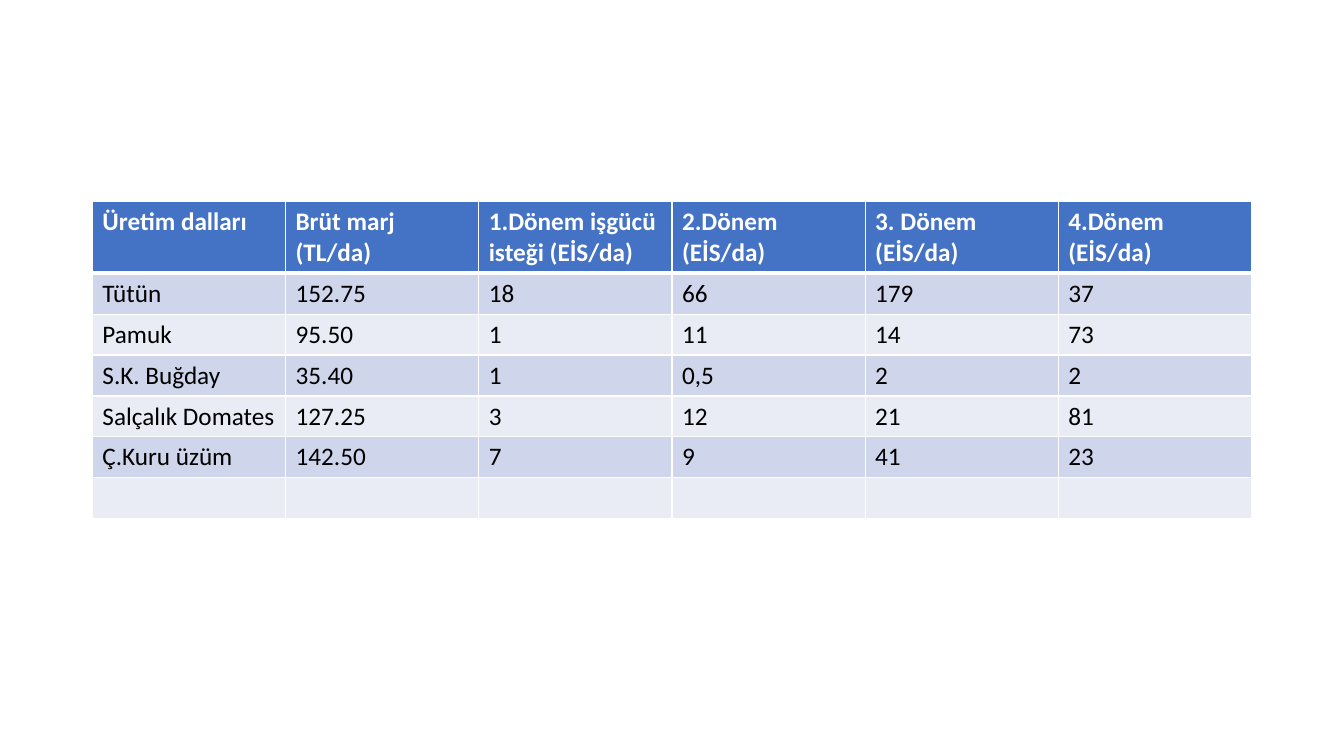
from pptx import Presentation
from pptx import util as u
from pptx.dml.color import RGBColor
from pptx.oxml import ns, xmlchemy

PX = 9525
WHITE = RGBColor(0xFF, 0xFF, 0xFF)
BLACK = RGBColor(0x00, 0x00, 0x00)
HEADER_BLUE = RGBColor(0x44, 0x72, 0xC4)
BANDS = (RGBColor(0xE9, 0xEB, 0xF5), RGBColor(0xCF, 0xD5, 0xEA))

LEFT, TOP, COLUMN_WIDTH, ROW_HEIGHT = 88, 192, 184, 39
BODY_FONT = {"name": "Calibri", "size": u.Pt(18), "bold": False}
HEADER_FONT = {**BODY_FONT, "bold": True}

CROPS = [
    ["Üretim dalları", "Brüt marj (TL/da)", "1.Dönem işgücü isteği (EİS/da)",
     "2.Dönem (EİS/da)", "3. Dönem (EİS/da)", "4.Dönem (EİS/da)"],
    ["Tütün", "152.75", "18", "66", "179", "37"],
    ["Pamuk", "95.50", "1", "11", "14", "73"],
    ["S.K. Buğday", "35.40", "1", "0,5", "2", "2"],
    ["Salçalık Domates", "127.25", "3", "12", "21", "81"],
    ["Ç.Kuru üzüm", "142.50", "7", "9", "41", "23"],
    [""] * 6,
]


def px(length):
    return u.Emu(length * PX)


def add_borders(cell, widths):
    properties = cell._tc.get_or_add_tcPr()
    for side, points in widths.items():
        line = xmlchemy.OxmlElement(f"a:ln{side}")
        line.set("w", str(u.Pt(points)))
        fill = xmlchemy.OxmlElement("a:solidFill")
        color = xmlchemy.OxmlElement("a:srgbClr")
        color.set("val", str(WHITE))
        fill.append(color)
        line.append(fill)
        properties.append(line)


def write_text(cell, words, font, color):
    if not words:
        return
    span = cell.text_frame.paragraphs[0].add_run()
    span.text = words
    for name, value in font.items():
        setattr(span.font, name, value)
    span.font.color.rgb = color


def format_cell(cell, words, row):
    header = row == 0
    add_borders(cell, {"L": 1, "R": 1, "T": 3 if row == 1 else 1, "B": 3 if header else 1})
    cell.fill.solid()
    cell.fill.fore_color.rgb = HEADER_BLUE if header else BANDS[row % 2]
    write_text(cell, words, HEADER_FONT if header else BODY_FONT, WHITE if header else BLACK)


def add_crop_table(page, records):
    rows, columns = len(records), len(records[0])
    table = page.shapes.add_table(
        rows, columns, px(LEFT), px(TOP),
        px(columns * COLUMN_WIDTH), px(rows * ROW_HEIGHT)).table
    for row, record in enumerate(records):
        for column, words in enumerate(record):
            format_cell(table.cell(row, column), words, row)


def main():
    deck = Presentation()
    deck.slide_width, deck.slide_height = px(1280), px(720)
    page = deck.slides.add_slide(deck.slide_layouts[6])
    add_crop_table(page, CROPS)
    deck.save("out.pptx")


if __name__ == "__main__":
    main()
